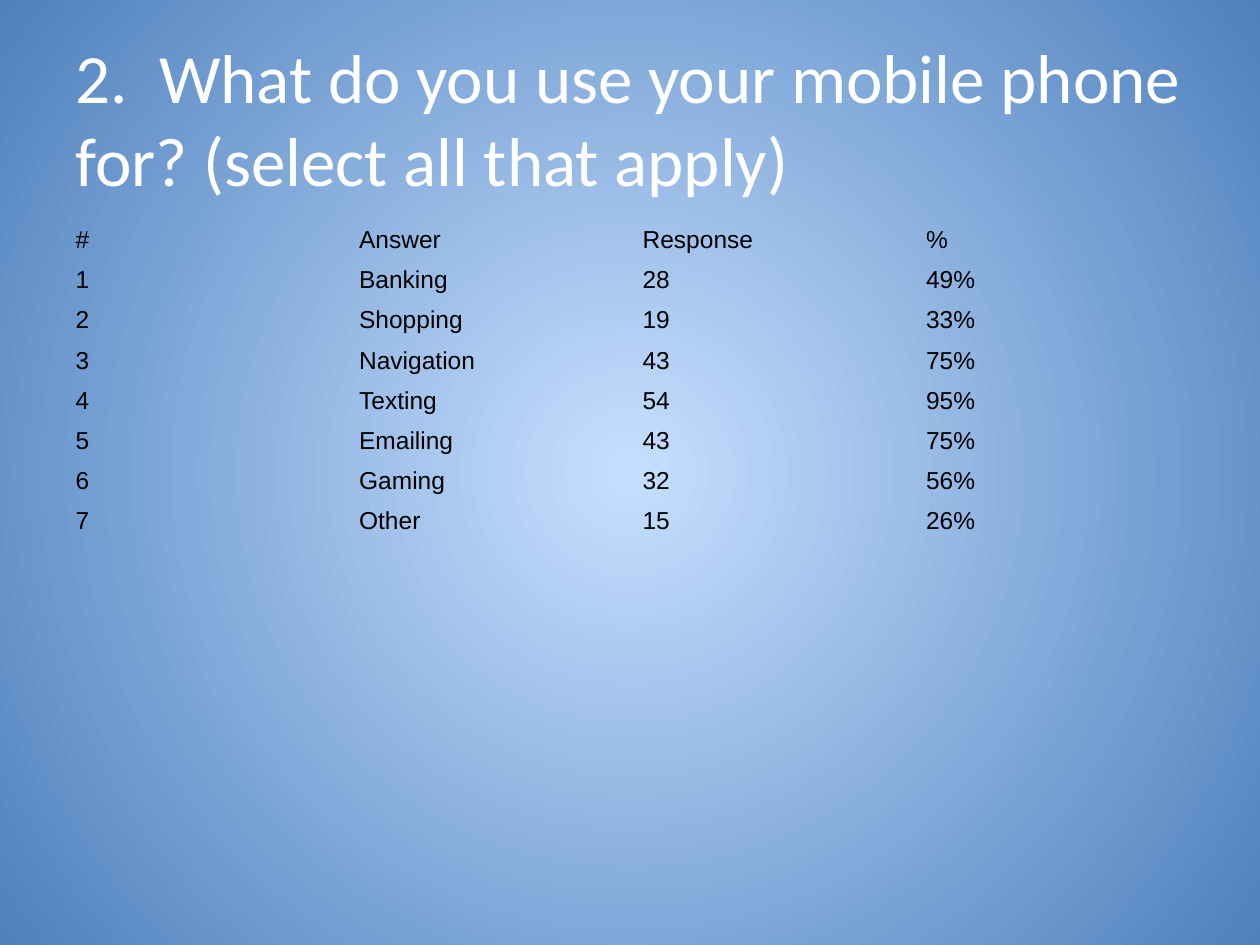
from lxml.etree import SubElement
from pptx import Presentation
from pptx.dml.color import RGBColor
from pptx.enum.text import MSO_ANCHOR, MSO_AUTO_SIZE, PP_ALIGN
from pptx.oxml.ns import qn
from pptx.util import Emu, Pt

COLORS = {"center": "C6DFFF", "edge": "4F81BD", "title": "FFFFFF", "text": "000000"}
ROWS = [
    ("#", "Answer", "Response", "%"),
    ("1", "Banking", "28", "49%"),
    ("2", "Shopping", "19", "33%"),
    ("3", "Navigation", "43", "75%"),
    ("4", "Texting", "54", "95%"),
    ("5", "Emailing", "43", "75%"),
    ("6", "Gaming", "32", "56%"),
    ("7", "Other", "15", "26%"),
]
NO_STYLE = "{2D5ABB26-0587-4C30-8999-92F81FD0307C}"


def px(n):
    return Emu(round(n * 914400 / 126))


def set_font(p, name, size, color):
    p.font.name = name
    p.font.size = Pt(size)
    p.font.color.rgb = RGBColor.from_string(COLORS[color])


prs = Presentation()
prs.slide_width, prs.slide_height = px(1260), px(945)
s = prs.slides.add_slide(prs.slide_layouts[5])

fill = s.background.fill
fill.gradient()
for stop, position, color in zip(fill.gradient_stops, (0, 1), ("center", "edge")):
    stop.position = position
    stop.color.rgb = RGBColor.from_string(COLORS[color])
grad = s.background._cSld.find(".//" + qn("a:gradFill"))
grad.remove(grad.find(qn("a:lin")))
circle = SubElement(grad, qn("a:path"), {"path": "circle"})
SubElement(circle, qn("a:fillToRect"), dict.fromkeys("ltrb", "50000"))

title = s.shapes.title
title.left, title.top, title.width, title.height = px(63), px(38), px(1134), px(158)
tf = title.text_frame
tf.text = "2.  What do you use your mobile phone for? (select all that apply)"
tf.word_wrap = True
tf.auto_size = MSO_AUTO_SIZE.NONE
tf.vertical_anchor = MSO_ANCHOR.MIDDLE
p = tf.paragraphs[0]
p.alignment = PP_ALIGN.LEFT
set_font(p, "Calibri", 39.5, "title")

frame = s.shapes.add_table(len(ROWS), len(ROWS[0]), px(63), px(220), px(1134), px(24 * len(ROWS)))
table = frame.table
table.first_row = table.horz_banding = False
table._tbl.tblPr.find(qn("a:tableStyleId")).text = NO_STYLE
for r, row in enumerate(ROWS):
    for c, text in enumerate(row):
        cell = table.cell(r, c)
        cell.text = text
        cell.fill.background()
        set_font(cell.text_frame.paragraphs[0], "Arial", 14, "text")

prs.save("out.pptx")
